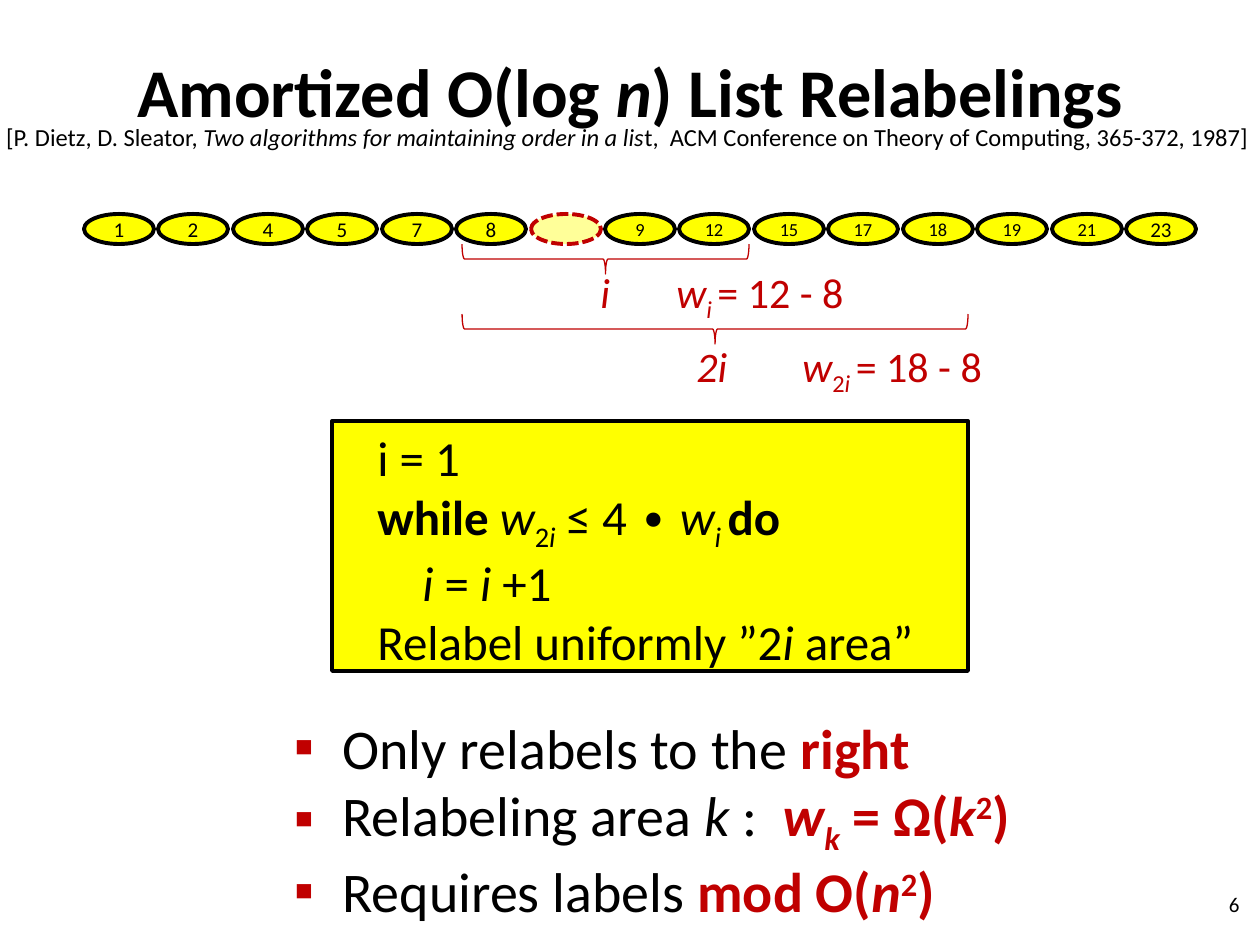
from dataclasses import dataclass

from lxml.etree import SubElement
from pptx import Presentation
from pptx.dml.color import RGBColor
from pptx.enum.dml import MSO_LINE_DASH_STYLE as Dash
from pptx.enum.shapes import MSO_SHAPE as Shape
from pptx.enum.text import MSO_ANCHOR as Anchor, PP_ALIGN as Align
from pptx.oxml.ns import qn
from pptx.util import Emu, Pt

EMU_PER_PX = 914400 / 126


def px(length):
    return Emu(round(length * EMU_PER_PX))


@dataclass(frozen=True)
class Theme:
    font: str = "Calibri"
    black: str = "000000"
    red: str = "C00000"
    yellow: str = "FFFF00"
    pale: str = "FFFF99"
    title: float = 39
    body: float = 32
    code: float = 28
    label: float = 24
    citation: float = 14
    small: float = 12
    tiny: float = 10.5


class SlideBuilder:
    def __init__(self, page, theme):
        self.page = page
        self.theme = theme

    def add_spans(self, paragraph, spans, size, color, align=Align.LEFT):
        """Fill a paragraph from (text, marks) spans.

        Marks: b bold, i italic, r red, _ subscript, ^ superscript.
        """
        paragraph.alignment = align
        for text, marks in spans:
            span = paragraph.add_run()
            span.text = text
            font = span.font
            font.name, font.size = self.theme.font, Pt(size)
            font.bold, font.italic = "b" in marks, "i" in marks
            shade = self.theme.red if "r" in marks else color
            font.color.rgb = RGBColor.from_string(shade)
            for mark, baseline in (("_", "-25000"), ("^", "30000")):
                if mark in marks:
                    span._r.get_or_add_rPr().set("baseline", baseline)

    def text(self, bounds, lines, size, color=None, align=Align.LEFT, anchor=Anchor.TOP):
        box = self.page.shapes.add_textbox(*map(px, bounds))
        self.fill_frame(box.text_frame, lines, size, color, align, anchor)
        return box.text_frame

    def fill_frame(self, frame, lines, size, color=None, align=Align.LEFT, anchor=Anchor.TOP):
        frame.word_wrap = True
        frame.vertical_anchor = anchor
        for number, spans in enumerate(lines):
            paragraph = frame.add_paragraph() if number else frame.paragraphs[0]
            self.add_spans(paragraph, spans, size, color or self.theme.black, align)

    def shape(self, kind, bounds, fill=None, line=None, width=2.25):
        shape = self.page.shapes.add_shape(kind, *map(px, bounds))
        shape.shadow.inherit = False
        if fill:
            shape.fill.solid()
            shape.fill.fore_color.rgb = RGBColor.from_string(fill)
        else:
            shape.fill.background()
        shape.line.color.rgb = RGBColor.from_string(line or self.theme.black)
        shape.line.width = Pt(width)
        return shape

    def list_node(self, bounds, label, size):
        """Draw a labelled node, or a dashed empty one if label is None."""
        if label is None:
            node = self.shape(Shape.OVAL, bounds, self.theme.pale, self.theme.red)
            node.line.dash_style = Dash.SQUARE_DOT
            return
        frame = self.shape(Shape.OVAL, bounds, self.theme.yellow).text_frame
        frame.margin_left = frame.margin_right = 0
        frame.margin_top = frame.margin_bottom = 0
        self.fill_frame(frame, [[(str(label), "")]], size, None, Align.CENTER, Anchor.MIDDLE)

    def brace_below(self, left, top, width, height):
        center_x, center_y = left + width / 2, top + height / 2
        bounds = (center_x - height / 2, center_y - width / 2, height, width)
        brace = self.shape(Shape.RIGHT_BRACE, bounds, line=self.theme.red, width=0.75)
        brace.rotation = 90

    def tabbed_label(self, bounds, spans, tab):
        frame = self.text(bounds, [spans], self.theme.label, self.theme.red)
        properties = frame.paragraphs[0]._p.get_or_add_pPr()
        tabs = SubElement(properties, qn("a:tabLst"))
        SubElement(tabs, qn("a:tab"), pos=str(px(tab)), algn="l")

    def code_box(self, bounds, lines, indents):
        frame = self.shape(Shape.RECTANGLE, bounds, self.theme.yellow).text_frame
        self.fill_frame(frame, lines, self.theme.code)
        for paragraph, indent in zip(frame.paragraphs, indents):
            paragraph._p.get_or_add_pPr().set("marL", str(px(indent)))

    def bullets(self, bounds, lines, indent):
        frame = self.text(bounds, lines, self.theme.body)
        for paragraph in frame.paragraphs:
            properties = paragraph._p.get_or_add_pPr()
            properties.set("marL", str(px(indent)))
            properties.set("indent", str(-px(indent)))
            color = SubElement(properties, qn("a:buClr"))
            SubElement(color, qn("a:srgbClr"), val=self.theme.red)
            SubElement(properties, qn("a:buFont"), typeface=self.theme.font)
            SubElement(properties, qn("a:buChar"), char="▪")


def main():
    deck = Presentation()
    deck.slide_width, deck.slide_height = px(1260), px(945)
    theme = Theme()
    slide = SlideBuilder(deck.slides.add_slide(deck.slide_layouts[6]), theme)

    slide.text((958, 879, 294, 50), [[("6", "")]], theme.small,
               align=Align.RIGHT, anchor=Anchor.MIDDLE)
    title = [("Amortized O(log ", "b"), ("n", "bi"), (") List Relabelings", "b")]
    slide.text((0, 45, 1260, 90), [title], theme.title,
               align=Align.CENTER, anchor=Anchor.MIDDLE)
    citation = [
        ("[P. Dietz, D. Sleator, ", ""),
        ("Two algorithms for maintaining order in a lis", "i"),
        ("t,  ACM Conference on Theory of Computing, 365-372, 1987]", ""),
    ]
    slide.text((-20, 116, 1295, 159), [citation], theme.citation, align=Align.CENTER)

    labels = [1, 2, 4, 5, 7, 8, None, 9, 12, 15, 17, 18, 19, 21, 23]
    first_left, last_left = 84, 1126
    step = (last_left - first_left) / (len(labels) - 1)
    for position, label in enumerate(labels):
        size = theme.tiny if label in (9, 12, 15, 17, 18, 19, 21) else theme.small
        slide.list_node((round(first_left + position * step), 214, 70, 30), label, size)

    slide.brace_below(462, 244, 287, 30)
    slide.brace_below(462, 314, 506, 30)
    slide.tabbed_label((588, 260, 318, 63),
                       [("i\tw", "i"), ("i ", "i_"), ("= 12 - 8", "")], tab=76)
    slide.tabbed_label((684, 334, 427, 63),
                       [("2i\tw", "i"), ("2", "_"), ("i ", "i_"), ("= 18 - 8", "")], tab=106)

    code = [
        [("i = 1", "")],
        [("while ", "b"), ("w", "i"), ("2", "_"), ("i", "i_"), (" ≤ 4 ∙ ", ""),
         ("w", "i"), ("i ", "i_"), ("do", "b")],
        [("i", "i"), (" = ", ""), ("i", "i"), (" +1", "")],
        [("Relabel uniformly ”2", ""), ("i ", "i"), ("area”", "")],
    ]
    slide.code_box((332, 421, 636, 250), code, indents=(33, 33, 78, 33))

    remarks = [
        [("Only relabels to the ", ""), ("right", "br")],
        [("Relabeling area ", ""), ("k ", "i"), (":  ", ""), ("w", "bir"), ("k", "bir_"),
         (" = Ω(", "br"), ("k", "bir"), ("2", "br^"), (")", "br")],
        [("Requires labels ", ""), ("mod O(", "br"), ("n", "bir"), ("2", "br^"), (")", "br")],
    ]
    slide.bullets((282, 707, 784, 252), remarks, indent=48)

    deck.save("out.pptx")


if __name__ == "__main__":
    main()
